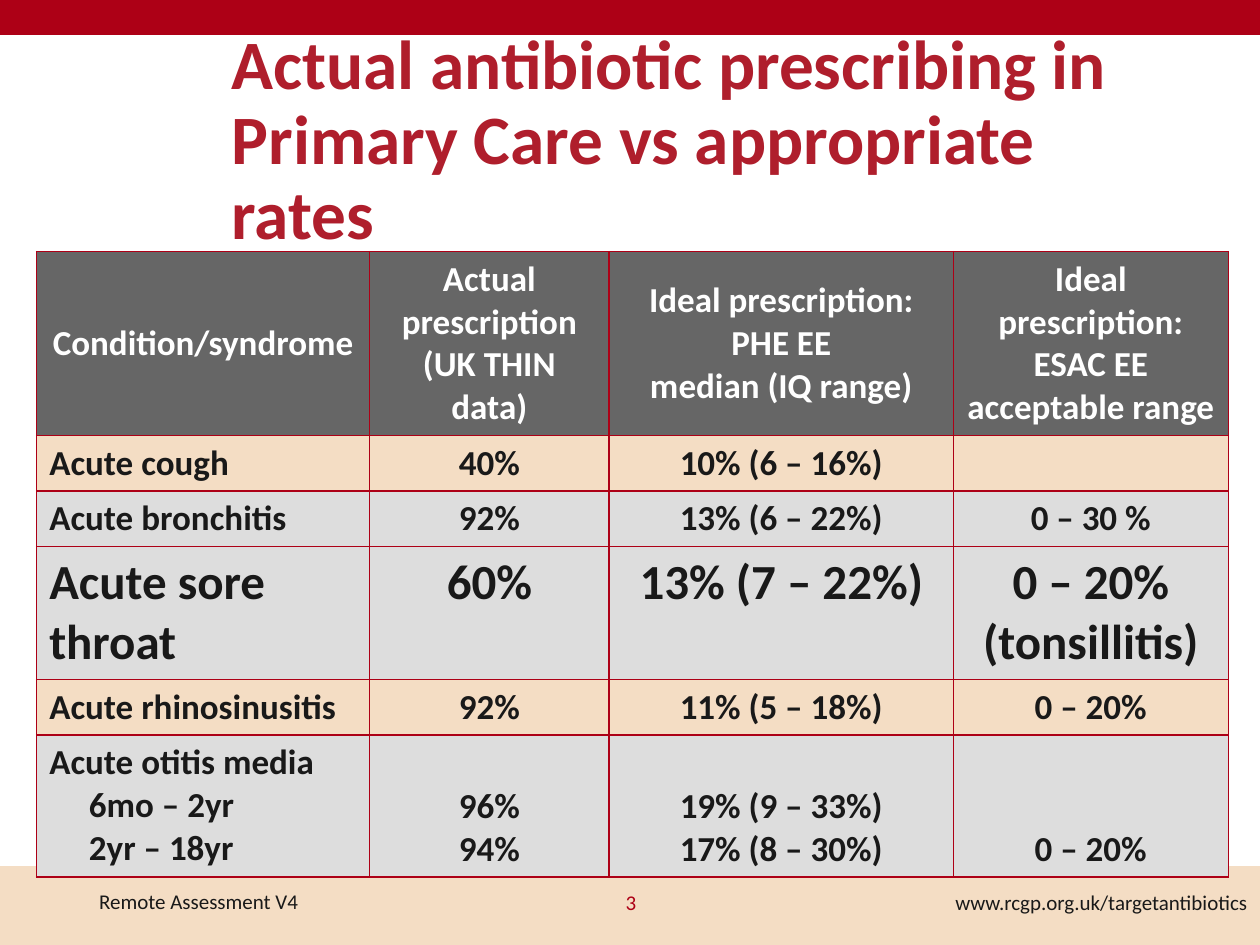
from dataclasses import dataclass
from lxml import etree
from pptx import Presentation
from pptx.dml.color import RGBColor
from pptx.enum.shapes import MSO_SHAPE
from pptx.enum.text import MSO_ANCHOR, PP_ALIGN
from pptx.oxml.ns import qn
from pptx.util import Cm, Pt

RECT = MSO_SHAPE.RECTANGLE
TOP, MIDDLE, BOTTOM = MSO_ANCHOR.TOP, MSO_ANCHOR.MIDDLE, MSO_ANCHOR.BOTTOM
LEFT, CENTER, RIGHT = PP_ALIGN.LEFT, PP_ALIGN.CENTER, PP_ALIGN.RIGHT


@dataclass(frozen=True)
class Theme:
    """Colours, font and type sizes of the slide."""
    font: str = "Calibri"
    red: str = "AD0016"
    title_red: str = "AF1E2C"
    sand: str = "F4DDC4"
    grey: str = "DDDDDD"
    header: str = "666666"
    ink: str = "191919"
    white: str = "FFFFFF"
    title: float = 39.6
    body: float = 20
    focus: float = 28
    small: float = 12


THEME = Theme()

COLUMNS = [6.71, 4.83, 6.94, 5.54]
HEADER = ["Condition/syndrome", "Actual prescription\n(UK THIN data)",
          "Ideal prescription: PHE EE\nmedian (IQ range)",
          "Ideal prescription: ESAC EE\nacceptable range"]
ROWS = [
    (3.71, THEME.header, THEME.white, THEME.body, HEADER),
    (1.12, THEME.sand, THEME.ink, THEME.body,
     ["Acute cough", "40%", "10% (6 – 16%)", ""]),
    (1.12, THEME.grey, THEME.ink, THEME.body,
     ["Acute bronchitis", "92%", "13% (6 – 22%)", "0 – 30 %"]),
    (2.68, THEME.grey, THEME.ink, THEME.focus,
     ["Acute sore throat", "60%", "13% (7 – 22%)", "0 – 20% (tonsillitis)"]),
    (1.12, THEME.sand, THEME.ink, THEME.body,
     ["Acute rhinosinusitis", "92%", "11% (5 – 18%)", "0 – 20%"]),
    (2.86, THEME.grey, THEME.ink, THEME.body,
     ["Acute otitis media\n6mo – 2yr\n2yr – 18yr", "96%\n94%",
      "19% (9 – 33%)\n17% (8 – 30%)", "0 – 20%"]),
]


def write(tf, text, size, color, align=LEFT, bold=False):
    """Fill a text frame and format its runs."""
    tf.text = text
    for p in tf.paragraphs:
        p.alignment = align
        for r in p.runs:
            r.font.name, r.font.size, r.font.bold = THEME.font, Pt(size), bold
            r.font.color.rgb = RGBColor.from_string(color)


def add_text(s, box, text, size, color, align=LEFT, bold=False):
    """Add a wrapped, vertically centred text box."""
    tf = s.shapes.add_textbox(*map(Cm, box)).text_frame
    tf.word_wrap, tf.vertical_anchor = True, MIDDLE
    write(tf, text, size, color, align, bold)
    return tf


def add_band(s, box, color):
    """Add a full-width colour band."""
    sp = s.shapes.add_shape(RECT, *map(Cm, box))
    sp.shadow.inherit = False
    sp.fill.solid()
    sp.fill.fore_color.rgb = sp.line.color.rgb = RGBColor.from_string(color)
    sp.line.width = Pt(1)


def add_title(s, box):
    """Add the slide title."""
    tf = add_text(s, box, "Actual antibiotic prescribing in Primary Care vs "
                  "appropriate rates", THEME.title, THEME.title_red, bold=True)
    tf.paragraphs[0].line_spacing = 0.9


def add_borders(cell):
    """Draw a red line on each side of a cell."""
    tc_pr = cell._tc.get_or_add_tcPr()
    for side in ("a:lnL", "a:lnR", "a:lnT", "a:lnB"):
        ln = etree.SubElement(tc_pr, qn(side), w=str(Pt(1)))
        fill = etree.SubElement(ln, qn("a:solidFill"))
        etree.SubElement(fill, qn("a:srgbClr"), val=THEME.red)


def add_rates_table(s, box):
    """Add the table of actual and ideal prescribing rates."""
    table = s.shapes.add_table(len(ROWS), len(COLUMNS), *map(Cm, box)).table
    for column, width in zip(table.columns, COLUMNS):
        column.width = Cm(width)
    for i, (height, fill, color, size, texts) in enumerate(ROWS):
        table.rows[i].height = Cm(height)
        for j, text in enumerate(texts):
            cell = table.cell(i, j)
            add_borders(cell)
            cell.fill.solid()
            cell.fill.fore_color.rgb = RGBColor.from_string(fill)
            last = i == len(ROWS) - 1 and j > 0
            cell.vertical_anchor = MIDDLE if i == 0 else BOTTOM if last else TOP
            align = LEFT if i and j == 0 else CENTER
            write(cell.text_frame, text, size, color, align, True)
    for p in table.cell(len(ROWS) - 1, 0).text_frame.paragraphs[1:]:
        p._p.get_or_add_pPr().set("marL", str(Cm(0.8)))


def add_footer(s, box):
    """Add the version, page number and web address over the bottom band."""
    x, y, w, h = box
    top, height = y + 0.2, 1.02
    add_text(s, (x + 1.75, top - 0.02, 5.72, height), "Remote Assessment V4",
             THEME.small, THEME.ink)
    add_text(s, (x + 9.86, top, 5.72, height), "3", THEME.small, THEME.red, CENTER)
    add_text(s, (x + w - 8.97, top, 8.97, height),
             "www.rcgp.org.uk/targetantibiotics", THEME.small, THEME.ink, RIGHT)


def main():
    """Build the slide and save it."""
    prs = Presentation()
    prs.slide_width, prs.slide_height = Cm(25.4), Cm(19.05)
    s = prs.slides.add_slide(prs.slide_layouts[6])
    footer = (0, 17.48, 25.4, 1.57)
    add_band(s, footer, THEME.sand)
    add_band(s, (0, 0, 25.4, 0.69), THEME.red)
    add_title(s, (4.42, 1.02, 19.23, 3.68))
    add_rates_table(s, (0.74, 5.07, sum(COLUMNS), sum(row[0] for row in ROWS)))
    add_footer(s, footer)
    prs.save("out.pptx")


if __name__ == "__main__":
    main()
